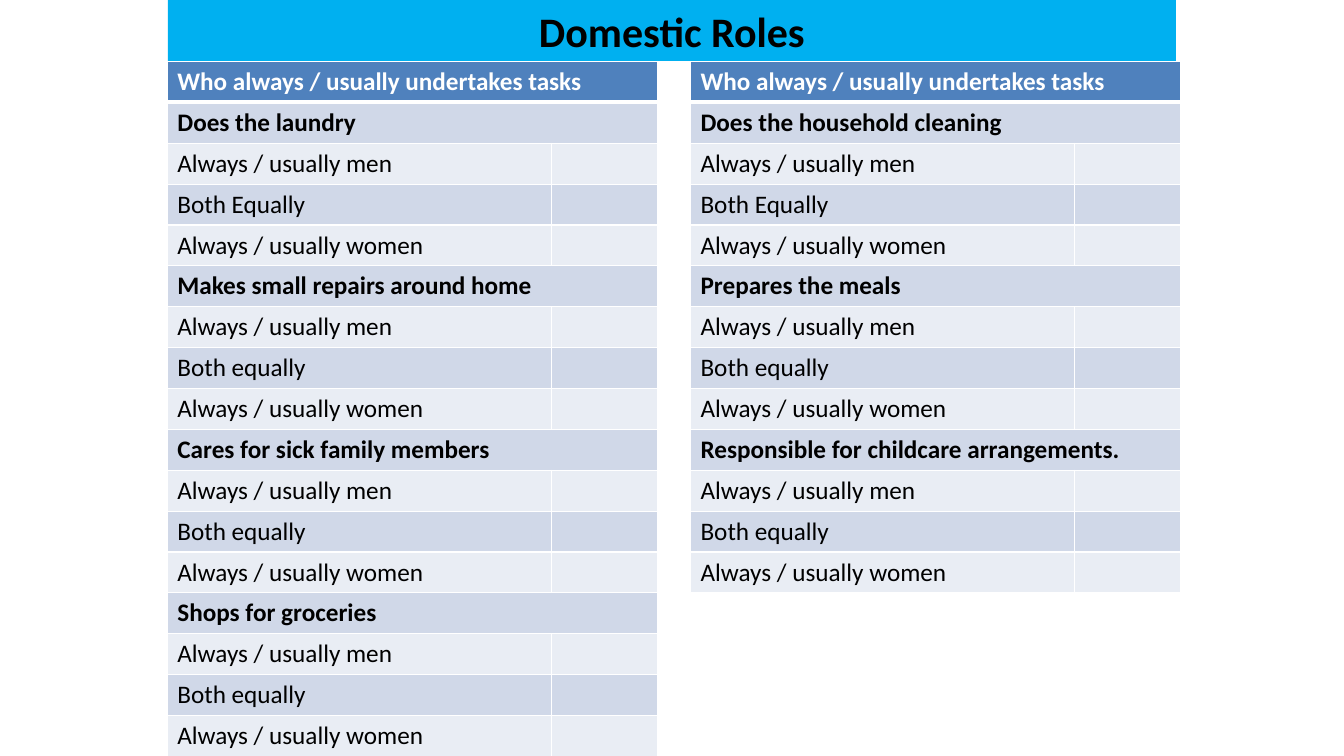
from pptx import Presentation
from pptx.dml.color import RGBColor
from pptx.enum.shapes import MSO_SHAPE as Shape
from pptx.enum.text import MSO_ANCHOR as Anchor, PP_ALIGN as Align
from pptx.oxml import parse_xml
from pptx.oxml.ns import nsdecls
from pptx.util import Pt

HEADING = "Who always / usually undertakes tasks"
LEFT_TASKS = [
    "Does the laundry",
    "Makes small repairs around home",
    "Cares for sick family members",
    "Shops for groceries",
]
RIGHT_TASKS = [
    "Does the household cleaning",
    "Prepares the meals",
    "Responsible for childcare arrangements.",
]
ROW_HEIGHT = 28.8
ANSWER_WIDTH = 75.6


def color(value):
    return RGBColor.from_string(value)


def write(frame, text, size=18, fill="000000", bold=False, align=Align.LEFT):
    paragraph = frame.paragraphs[0]
    paragraph.alignment = align
    run = paragraph.add_run()
    run.text = text
    run.font.name = "Calibri"
    run.font.size = Pt(size)
    run.font.bold = bold
    run.font.color.rgb = color(fill)


def add_title(slide, left, top, width, height):
    banner = slide.shapes.add_shape(
        Shape.RECTANGLE, Pt(left), Pt(top), Pt(width), Pt(height))
    banner.shadow.inherit = False
    banner.fill.solid()
    banner.fill.fore_color.rgb = color("00B0F0")
    banner.line.fill.background()
    banner.text_frame.word_wrap = True
    banner.text_frame.vertical_anchor = Anchor.MIDDLE
    write(banner.text_frame, "Domestic Roles", size=30, bold=True, align=Align.CENTER)


def format_cell(cell, fill, bottom_width):
    properties = cell._tc.get_or_add_tcPr()
    for side, width in (("L", 1), ("R", 1), ("T", 1), ("B", bottom_width)):
        properties.append(parse_xml(
            f'<a:ln{side} {nsdecls("a")} w="{Pt(width)}">'
            f'<a:solidFill><a:srgbClr val="FFFFFF"/></a:solidFill></a:ln{side}>'))
    cell.fill.solid()
    cell.fill.fore_color.rgb = color(fill)


def task_rows(tasks):
    rows = [(HEADING, True)]
    for index, task in enumerate(tasks):
        both = "Both equally" if index else "Both Equally"
        rows.append((task, True))
        rows += [(answer, False) for answer in
                 ("Always / usually men", both, "Always / usually women")]
    return rows


def add_task_table(slide, left, top, width, tasks):
    rows = task_rows(tasks)
    table = slide.shapes.add_table(
        len(rows), 2, Pt(left), Pt(top), Pt(width), Pt(ROW_HEIGHT * len(rows))).table
    table.columns[0].width = Pt(width - ANSWER_WIDTH)
    table.columns[1].width = Pt(ANSWER_WIDTH)
    for index, (text, is_heading) in enumerate(rows):
        table.rows[index].height = Pt(ROW_HEIGHT)
        is_top = index == 0
        fill = "4F81BD" if is_top else "D0D8E8" if index % 2 else "E9EDF4"
        label, answer = table.cell(index, 0), table.cell(index, 1)
        for cell in (label, answer):
            format_cell(cell, fill, 3 if is_top else 1)
        if is_heading:
            label.merge(answer)
        write(label.text_frame, text, bold=is_heading,
              fill="FFFFFF" if is_top else "000000")


def main():
    presentation = Presentation()
    presentation.slide_width = Pt(960)
    presentation.slide_height = Pt(540)
    slide = presentation.slides.add_slide(presentation.slide_layouts[6])
    add_title(slide, 120, 0, 720, 43.6)
    add_task_table(slide, 119.5, 43.9, 350, LEFT_TASKS)
    add_task_table(slide, 493.2, 43.9, 350, RIGHT_TASKS)
    presentation.save("out.pptx")


if __name__ == "__main__":
    main()
